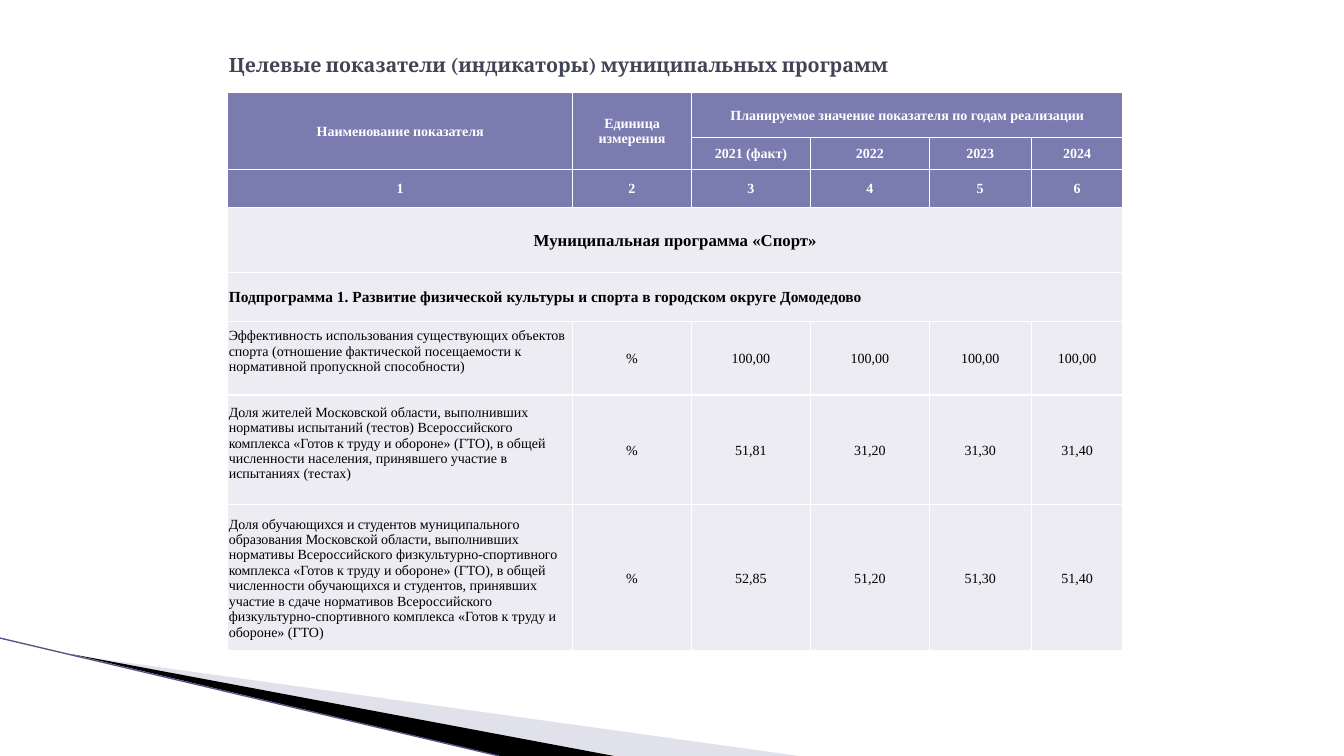
from dataclasses import dataclass

from lxml import etree
from pptx import Presentation
from pptx.dml.color import RGBColor
from pptx.enum.shapes import MSO_CONNECTOR
from pptx.enum.text import MSO_ANCHOR, MSO_AUTO_SIZE, PP_ALIGN
from pptx.oxml.ns import qn
from pptx.util import Inches, Pt

LEFT, CENTER = PP_ALIGN.LEFT, PP_ALIGN.CENTER
MIDDLE = MSO_ANCHOR.MIDDLE
STRAIGHT = MSO_CONNECTOR.STRAIGHT
NO_AUTOFIT = MSO_AUTO_SIZE.NONE

SLIDE_WIDTH, SLIDE_HEIGHT = Inches(13.33), Inches(7.5)
COLORS = {
    "title": "424456",
    "header": "7A7BAE",
    "body": "ECECF2",
    "white": "FFFFFF",
    "black": "000000",
    "pale": "B6B6D1",
    "edge": "53548A",
}
CELL_MARGINS = {
    "margin_left": Inches(0.01),
    "margin_right": Inches(0.01),
    "margin_top": Inches(0.01),
    "margin_bottom": 0,
    "vertical_anchor": MIDDLE,
}
COLUMN_WIDTHS = [25.65, 8.85, 8.85, 8.85, 7.58, 6.83]
ROW_HEIGHTS = [5.87, 4.27, 5.07, 8.53, 6.53, 9.73, 14.53, 19.33]


@dataclass(frozen=True)
class Wedge:
    points: list[tuple[float, float]]
    color: str
    opacity: int


@dataclass(frozen=True)
class Entry:
    row: int
    column: int
    text: str
    size: int = 10
    bold: bool = False
    color: str = "black"
    align: PP_ALIGN = CENTER
    rows: int = 1
    columns: int = 1
    lift: float = 0


@dataclass(frozen=True)
class Indicator:
    name: str
    values: list[str]
    lift: float = 0


WEDGES = [
    Wedge([(5.48, 86.67), (59.48, 100), (45.6, 100)], "pale", 40),
    Wedge([(5.33, 86.53), (45.68, 100), (37.2, 100)], "black", 100),
]
HEADINGS = [
    Entry(0, 0, "Наименование показателя", rows=2, bold=True, color="white"),
    Entry(0, 1, "Единица измерения", rows=2, bold=True, color="white"),
    Entry(0, 2, "Планируемое значение показателя по годам реализации",
          columns=4, bold=True, color="white"),
    Entry(3, 0, "Муниципальная программа «Спорт»", 12, True, columns=6),
    Entry(4, 0, "Подпрограмма 1. Развитие физической культуры и спорта "
          "в городском округе Домодедово", 11, True, align=LEFT, columns=6),
]
YEARS = ["2021 (факт)", "2022", "2023", "2024"]
INDICATORS = [
    Indicator("Эффективность использования существующих объектов спорта "
              "(отношение фактической посещаемости к нормативной пропускной "
              "способности)", ["100,00"] * 4, 0.14),
    Indicator("Доля жителей Московской области, выполнивших нормативы испытаний "
              "(тестов) Всероссийского комплекса «Готов к труду и обороне» (ГТО), "
              "в общей численности населения, принявшего участие в испытаниях "
              "(тестах)", ["51,81", "31,20", "31,30", "31,40"], 0.14),
    Indicator("Доля обучающихся и студентов муниципального образования Московской "
              "области, выполнивших нормативы Всероссийского "
              "физкультурно-спортивного комплекса «Готов к труду и обороне» (ГТО), "
              "в общей численности обучающихся и студентов, принявших участие в "
              "сдаче нормативов Всероссийского физкультурно-спортивного комплекса "
              "«Готов к труду и обороне» (ГТО)",
              ["52,85", "51,20", "51,30", "51,40"]),
]


def across(share: float) -> int:
    return round(SLIDE_WIDTH * share / 100)


def down(share: float) -> int:
    return round(SLIDE_HEIGHT * share / 100)


def rgb(name: str) -> RGBColor:
    return RGBColor.from_string(COLORS[name])


def write(paragraph, text: str, font: str, size: int, bold: bool, color: str) -> None:
    run = paragraph.add_run()
    run.text = text
    for name, value in {"name": font, "size": Pt(size), "bold": bold}.items():
        setattr(run.font, name, value)
    run.font.color.rgb = rgb(color)


def draw_wedge(slide, wedge: Wedge) -> None:
    corners = [(across(x), down(y)) for x, y in wedge.points]
    builder = slide.shapes.build_freeform(*corners[0])
    builder.add_line_segments(corners[1:])
    shape = builder.convert_to_shape()
    shape.shadow.inherit = False
    shape.line.fill.background()
    shape.fill.solid()
    shape.fill.fore_color.rgb = rgb(wedge.color)
    if wedge.opacity < 100:
        tint = shape.fill._xPr.find(".//" + qn("a:srgbClr"))
        etree.SubElement(tint, qn("a:alpha"), val=str(wedge.opacity * 1000))


def draw_edge(slide) -> None:
    edge = slide.shapes.add_connector(STRAIGHT, 0, down(84.4), across(37.13), down(100))
    edge.line.color.rgb = rgb("edge")
    edge.line.width = Pt(0.95)
    etree.SubElement(edge._element.spPr, qn("a:effectLst"))


def draw_title(slide) -> None:
    title = slide.shapes.title
    box = {"left": across(16.28), "top": down(4), "width": across(67.5), "height": down(9.2)}
    for name, value in box.items():
        setattr(title, name, value)
    frame = title.text_frame
    for name, value in {"auto_size": NO_AUTOFIT, "word_wrap": True,
                        "vertical_anchor": MIDDLE}.items():
        setattr(frame, name, value)
    frame.paragraphs[0].alignment = LEFT
    write(frame.paragraphs[0], "Целевые показатели (индикаторы) муниципальных программ",
          "Cambria", 14, True, "title")


def format_cell(cell, fill: str) -> None:
    for name, value in CELL_MARGINS.items():
        setattr(cell, name, value)
    cell.fill.solid()
    cell.fill.fore_color.rgb = rgb(fill)
    properties = cell._tc.get_or_add_tcPr()
    for position, side in enumerate(["a:lnL", "a:lnR", "a:lnT", "a:lnB"]):
        border = etree.Element(qn(side), w=str(Pt(1)))
        paint = etree.SubElement(border, qn("a:solidFill"))
        etree.SubElement(paint, qn("a:srgbClr"), val=COLORS["white"])
        properties.insert(position, border)


def table_entries() -> list[Entry]:
    entries = list(HEADINGS)
    for column, year in enumerate(YEARS, 2):
        entries.append(Entry(1, column, year, bold=True, color="white"))
    for column in range(len(COLUMN_WIDTHS)):
        entries.append(Entry(2, column, str(column + 1), bold=True, color="white"))
    for row, indicator in enumerate(INDICATORS, 5):
        entries.append(Entry(row, 0, indicator.name, align=LEFT, lift=indicator.lift))
        for column, value in enumerate(["%", *indicator.values], 1):
            entries.append(Entry(row, column, value))
    return entries


def draw_table(slide) -> None:
    indicators = slide.shapes.add_table(
        len(ROW_HEIGHTS), len(COLUMN_WIDTHS), across(16.95), down(12.27),
        across(sum(COLUMN_WIDTHS)), down(sum(ROW_HEIGHTS))).table
    for column, width in zip(indicators.columns, COLUMN_WIDTHS):
        column.width = across(width)
    for index, height in enumerate(ROW_HEIGHTS):
        indicators.rows[index].height = down(height)
        for cell in indicators.rows[index].cells:
            format_cell(cell, "header" if index < 3 else "body")
    for entry in table_entries():
        cell = indicators.cell(entry.row, entry.column)
        if entry.rows * entry.columns > 1:
            cell.merge(indicators.cell(entry.row + entry.rows - 1,
                                       entry.column + entry.columns - 1))
        cell.margin_bottom = Inches(entry.lift)
        paragraph = cell.text_frame.paragraphs[0]
        paragraph.alignment = entry.align
        write(paragraph, entry.text, "Times New Roman", entry.size, entry.bold, entry.color)


def main() -> None:
    deck = Presentation()
    deck.slide_width, deck.slide_height = SLIDE_WIDTH, SLIDE_HEIGHT
    slide = deck.slides.add_slide(deck.slide_layouts[5])
    for wedge in WEDGES:
        draw_wedge(slide, wedge)
    draw_edge(slide)
    draw_title(slide)
    draw_table(slide)
    deck.save("out.pptx")


if __name__ == "__main__":
    main()
